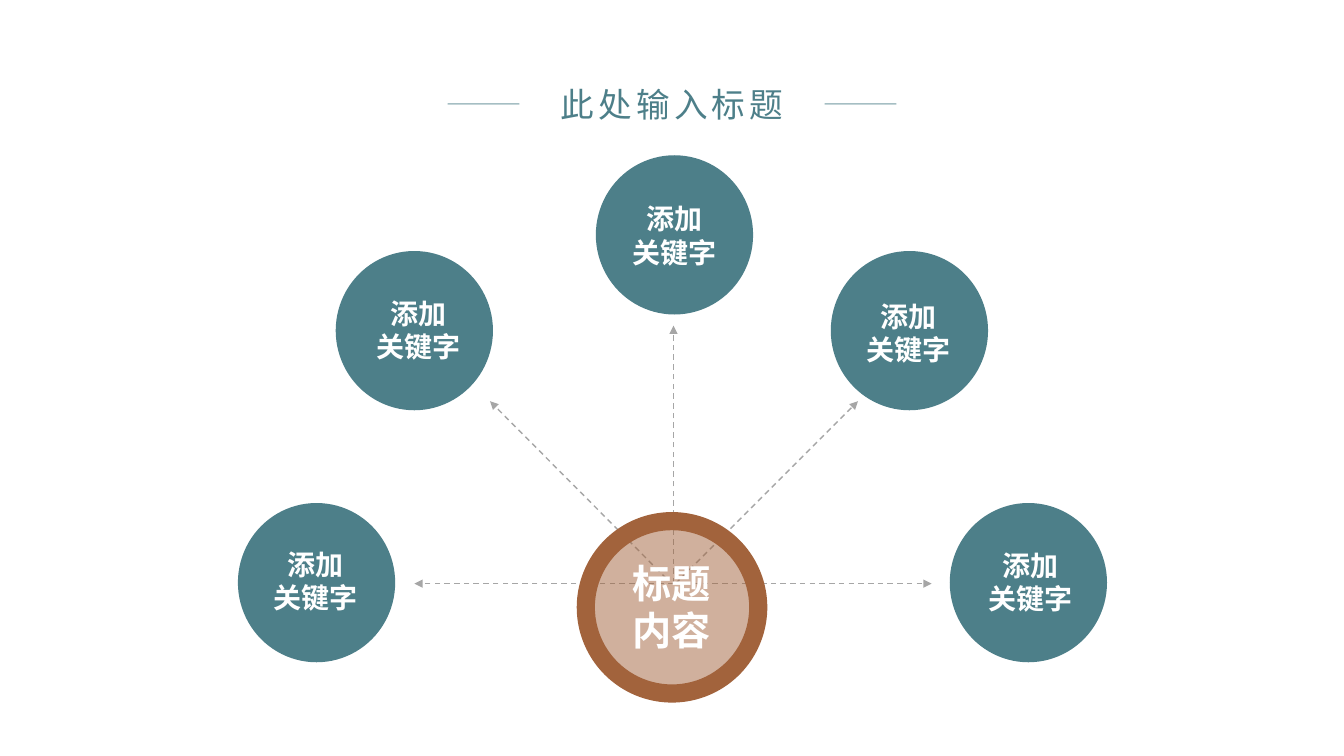
import pptx
import pptx.util
import pptx.dml.color
import pptx.enum.dml
import pptx.enum.shapes
import pptx.enum.text
import pptx.oxml.ns
from lxml import etree

Inches = pptx.util.Inches
Pt = pptx.util.Pt
SHAPE = pptx.enum.shapes.MSO_SHAPE

COLORS = {"teal": "4D7F89", "brown": "A2633C", "gray": "A6A6A6", "white": "FFFFFF"}
FONT = "Noto Sans CJK SC"
KEYWORD = ["添加", "关键字"]
CIRCLE_SIZE = (1.56, 1.58)
LABEL_SIZE = (1.5, 0.84)

# Circle corner, then offset of its label box from that corner
KEYWORD_CIRCLES = [
    ((2.36, 4.99), (0.02, 0.36)),
    ((3.33, 2.49), (0.07, 0.37)),
    ((5.91, 1.54), (0.03, 0.38)),
    ((8.24, 2.49), (0.02, 0.40)),
    ((9.42, 4.99), (0.05, 0.37)),
]
ARROWS = [
    ((6.68, 5.79), (4.11, 5.79)),
    ((6.68, 5.79), (9.24, 5.79)),
    ((6.68, 5.79), (6.68, 3.23)),
    ((6.70, 5.79), (8.51, 3.98)),
    ((6.61, 5.74), (4.86, 3.98)),
]


def rgb(name):
    return pptx.dml.color.RGBColor.from_string(COLORS[name])


def add_element(parent, tag, **attributes):
    return etree.SubElement(parent, pptx.oxml.ns.qn(tag), **attributes)


def set_alpha(fill_format, properties, percent):
    """Make the solid colour found inside the given properties translucent."""
    color = properties.find(".//" + pptx.oxml.ns.qn("a:srgbClr"))
    add_element(color, "a:alpha", val=str(percent * 1000))


def add_text(slide, box, lines, size, color="white", bold=False,
             spacing=0, insets=(0.1, 0.05)):
    shape = slide.shapes.add_textbox(*map(Inches, box))
    frame = shape.text_frame
    frame.word_wrap = True
    frame.margin_left = frame.margin_right = Inches(insets[0])
    frame.margin_top = frame.margin_bottom = Inches(insets[1])
    for index, line in enumerate(lines):
        paragraph = frame.paragraphs[0] if index == 0 else frame.add_paragraph()
        paragraph.alignment = pptx.enum.text.PP_ALIGN.CENTER
        run = paragraph.add_run()
        run.text = line
        run.font.size = Pt(size)
        run.font.bold = bold
        run.font.color.rgb = rgb(color)
        run.font.name = FONT
        properties = run.font._element
        add_element(properties, "a:ea", typeface=FONT)
        if spacing:
            properties.set("spc", str(spacing * 100))


def add_round(slide, kind, box, color, alpha=None):
    shape = slide.shapes.add_shape(kind, *map(Inches, box))
    shape.shadow.inherit = False
    shape.fill.solid()
    shape.fill.fore_color.rgb = rgb(color)
    shape.line.fill.background()
    if alpha:
        set_alpha(shape.fill, shape._element.spPr, alpha)
    return shape


def add_line(slide, start, end, color, alpha=None, arrow=False):
    line = slide.shapes.add_connector(
        pptx.enum.shapes.MSO_CONNECTOR.STRAIGHT, *map(Inches, start + end))
    line.line.width = Pt(1)
    line.line.color.rgb = rgb(color)
    properties = line._element.spPr
    if alpha:
        set_alpha(line.line.fill, properties, alpha)
    if arrow:
        line.line.dash_style = pptx.enum.dml.MSO_LINE.DASH
        add_element(properties.find(pptx.oxml.ns.qn("a:ln")), "a:tailEnd", type="triangle")
    add_element(properties, "a:effectLst")


def add_title(slide, left, top, width, height):
    """Centred title between two short rules."""
    rule_y = top + height / 2
    rule_length = 0.71
    for x in (left, left + width - rule_length):
        add_line(slide, (x, rule_y), (x + rule_length, rule_y), "teal", alpha=50)
    add_text(slide, (left + 0.75, top, width - 1.5, height), ["此处输入标题"],
             size=24, color="teal", spacing=3)


def add_keyword(slide, left, top, label_offset):
    add_round(slide, SHAPE.OVAL, (left, top) + CIRCLE_SIZE, "teal")
    label_corner = (left + label_offset[0], top + label_offset[1])
    add_text(slide, label_corner + LABEL_SIZE, KEYWORD, size=20, bold=True,
             insets=(0.16, 0.08))


def add_hub(slide, left, top, size):
    """Translucent disc inside a solid ring, with the central heading."""
    disc = 1.58
    inset = (size - disc) / 2
    add_round(slide, SHAPE.OVAL, (left + inset, top + inset, disc, disc), "brown", alpha=50)
    ring = add_round(slide, SHAPE.DONUT, (left, top, size, size), "brown")
    ring.adjustments[0] = 0.18 / size
    add_text(slide, (left + 0.32, top + 0.4, 1.24, 1.08), ["标题内容"], size=28,
             bold=True, insets=(0.13, 0.07))


def main():
    presentation = pptx.Presentation()
    presentation.slide_width = Inches(13.33)
    presentation.slide_height = Inches(7.5)
    slide = presentation.slides.add_slide(presentation.slide_layouts[6])
    for start, end in ARROWS:
        add_line(slide, start, end, "gray", arrow=True)
    for corner, label_offset in KEYWORD_CIRCLES:
        add_keyword(slide, *corner, label_offset)
    add_hub(slide, 5.72, 5.08, 1.89)
    add_title(slide, 4.44, 0.78, 4.45, 0.5)
    presentation.save("out.pptx")


if __name__ == "__main__":
    main()
